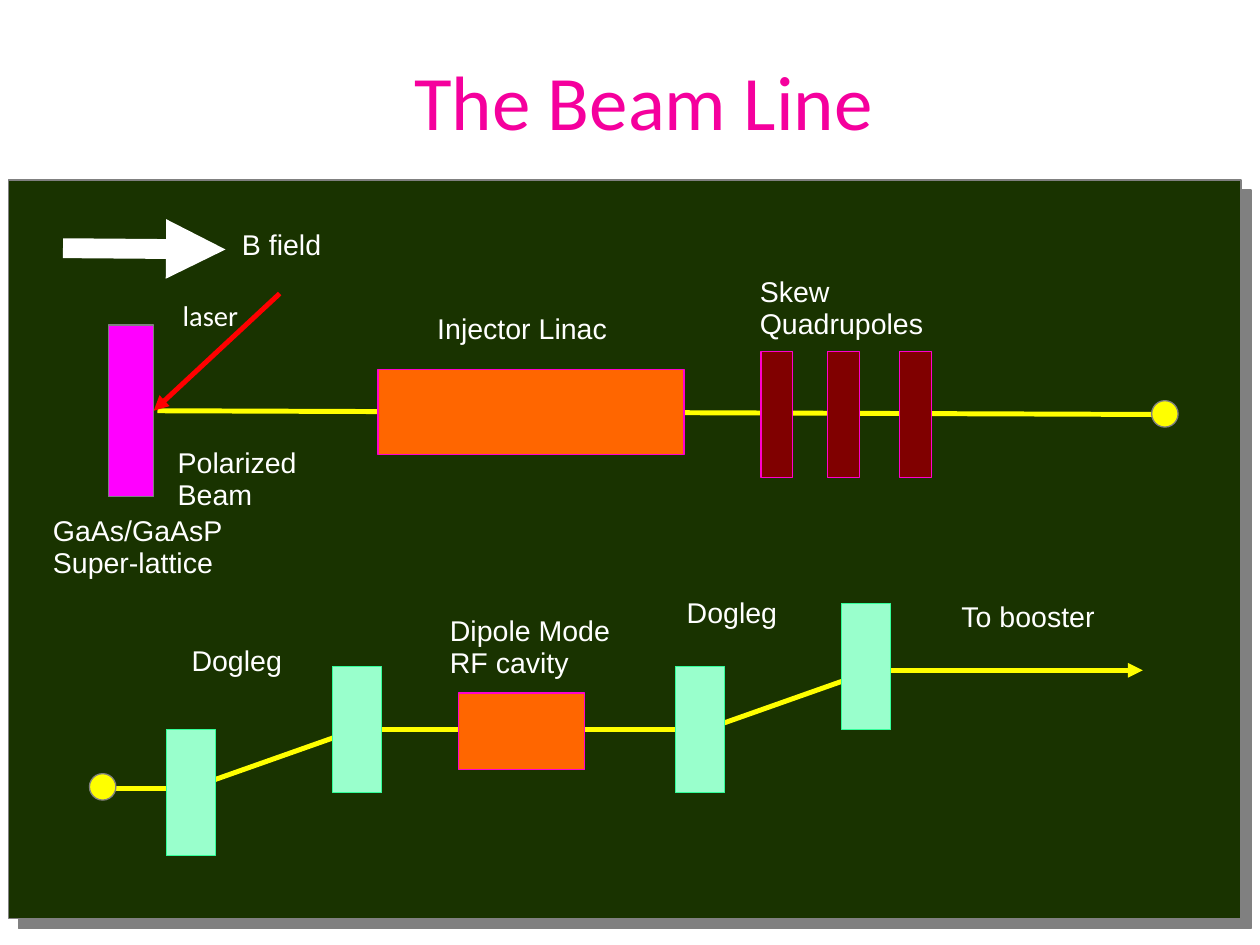
"""Build the beam line slide: two rows of accelerator elements on a dark panel."""
from lxml.etree import SubElement
from pptx import Presentation
from pptx.dml.color import RGBColor
from pptx.enum.shapes import MSO_CONNECTOR, MSO_SHAPE
from pptx.enum.text import MSO_ANCHOR, PP_ALIGN
from pptx.oxml.ns import qn
from pptx.util import Inches, Pt

THEME = {
    "title": {"name": "Calibri", "size": 44, "color": "F5009D"},
    "label": {"name": "Arial", "size": 16.3, "color": "FFFFFF"},
    "laser": {"name": "Calibri", "size": 16.3, "color": "FFFFFF"},
    "panel": ("193300", "808080"),
    "cathode": ("FF00FF", "808080"),
    "cavity": ("FF6600", "FF00CC"),
    "quadrupole": ("800000", "FF00CC"),
    "magnet": ("99FFCC", "33FF99"),
    "node": ("FFFF00", "808080"),
    "beam": ("FFFF00", 2.83),
    "laser ray": ("FF0000", 2.83),
    "field": ("FFFFFF", 11.34),
    "shadow": "808080",
}

TITLE = "The Beam Line"
PANEL = (0.07, 1.43, 9.78, 5.86)
LINES = [
    ("beam", (1.25, 3.26), (9.25, 3.29), False),
    ("beam", (0.86, 6.26), (1.5, 6.26), False),
    ("beam", (1.5, 6.26), (2.86, 5.78), False),
    ("beam", (2.86, 5.79), (5.57, 5.79), False),
    ("beam", (5.57, 5.8), (6.93, 5.32), False),
    ("beam", (6.89, 5.32), (9.07, 5.32), True),
    ("laser ray", (2.22, 2.33), (1.22, 3.26), True),
    ("field", (0.5, 1.97), (1.79, 1.98), True),
]
CATHODE = (0.86, 2.58, 0.36, 1.36)
CAVITIES = [(3, 2.93, 2.43, 0.68), (3.64, 5.5, 1, 0.61)]
QUADRUPOLE_LEFTS = [6.04, 6.57, 7.14]
MAGNETS = [(1.32, 5.79), (2.64, 5.29), (5.36, 5.29), (6.68, 4.79)]
NODES = [(9.14, 3.18), (0.71, 6.14)]
LABELS = [
    (["GaAs/GaAsP", "Super-lattice"], (0.33, 4.04, 1.53, 0.6), "label", False),
    (["laser"], (1.36, 2.33, 0.67, 0.34), "laser", False),
    (["Polarized Beam"], (1.32, 3.5, 1.78, 0.34), "label", False),
    (["B field"], (1.83, 1.77, 1.12, 0.34), "label", True),
    (["To booster"], (7.54, 4.72, 1.82, 0.6), "label", True),
    (["Skew Quadrupoles"], (5.94, 2.14, 2.05, 0.6), "label", True),
    (["Injector Linac"], (3.38, 2.43, 2.09, 0.34), "label", True),
    (["Dipole Mode", "RF cavity"], (3.48, 4.83, 2.09, 0.6), "label", True),
    (["Dogleg"], (1.43, 5.07, 2.09, 0.6), "label", True),
    (["Dogleg"], (5.36, 4.69, 2.09, 0.6), "label", True),
]


def apply(target, values):
    for name, value in values.items():
        setattr(target, name, value)


def write(frame, lines, style, margins, spacing, align, anchor, wrap):
    left, top, right, bottom = map(Inches, margins)
    apply(frame, {"margin_left": left, "margin_top": top, "margin_right": right,
                  "margin_bottom": bottom, "vertical_anchor": anchor, "word_wrap": wrap})
    look = THEME[style]
    for index, line in enumerate(lines):
        para = frame.add_paragraph() if index else frame.paragraphs[0]
        apply(para, {"alignment": align, "line_spacing": spacing})
        span = para.add_run()
        span.text = line
        apply(span.font, {"name": look["name"], "size": Pt(look["size"])})
        span.font.color.rgb = RGBColor.from_string(look["color"])


def add_part(page, style, place, kind=MSO_SHAPE.ROUNDED_RECTANGLE):
    part = page.shapes.add_shape(kind, *map(Inches, place))
    fill, outline = THEME[style]
    part.shadow.inherit = False
    part.fill.solid()
    part.fill.fore_color.rgb = RGBColor.from_string(fill)
    part.line.color.rgb = RGBColor.from_string(outline)
    part.line.width = Pt(0.75)
    if kind == MSO_SHAPE.ROUNDED_RECTANGLE:
        part.adjustments[0] = 0
    return part


def add_line(page, style, start, end, arrow):
    line = page.shapes.add_connector(MSO_CONNECTOR.STRAIGHT, *map(Inches, start + end))
    color, width = THEME[style]
    line.line.color.rgb = RGBColor.from_string(color)
    line.line.width = Pt(width)
    if arrow:
        SubElement(line.line._get_or_add_ln(), qn("a:tailEnd"), type="triangle")
    SubElement(line._element.spPr, qn("a:effectLst"))


def cast_shadow(part):
    effects = part._element.spPr.find(qn("a:effectLst"))
    shadow = SubElement(effects, qn("a:outerShdw"), dist=str(Pt(8)),
                        dir=str(45 * 60000), algn="tl", rotWithShape="0")
    SubElement(shadow, qn("a:srgbClr"), val=THEME["shadow"])


def main():
    deck = Presentation()
    apply(deck, {"slide_width": Inches(10), "slide_height": Inches(7.5)})
    page = deck.slides.add_slide(deck.slide_layouts[5])

    title = page.shapes.title
    apply(title, dict(zip(("left", "top", "width", "height"),
                          map(Inches, (0.79, 0.04, 8.64, 1.61)))))
    write(title.text_frame, [TITLE], "title", (0.1, 0.02, 0.1, 0.05), 0.95,
          PP_ALIGN.CENTER, MSO_ANCHOR.MIDDLE, True)

    cast_shadow(add_part(page, "panel", PANEL))
    for line in LINES:
        add_line(page, *line)
    add_part(page, "cathode", CATHODE)
    for place in CAVITIES:
        add_part(page, "cavity", place)
    for left in QUADRUPOLE_LEFTS:
        add_part(page, "quadrupole", (left, 2.79, 0.25, 1))
    for corner in MAGNETS:
        add_part(page, "magnet", corner + (0.39, 1))
    for corner in NODES:
        add_part(page, "node", corner + (0.21, 0.21), MSO_SHAPE.OVAL)
    for lines, place, style, wrap in LABELS:
        box = page.shapes.add_textbox(*map(Inches, place))
        write(box.text_frame, lines, style, (0.09, 0.06, 0.09, 0.04), 0.93,
              PP_ALIGN.LEFT, MSO_ANCHOR.TOP, wrap)

    deck.save("out.pptx")


if __name__ == "__main__":
    main()
